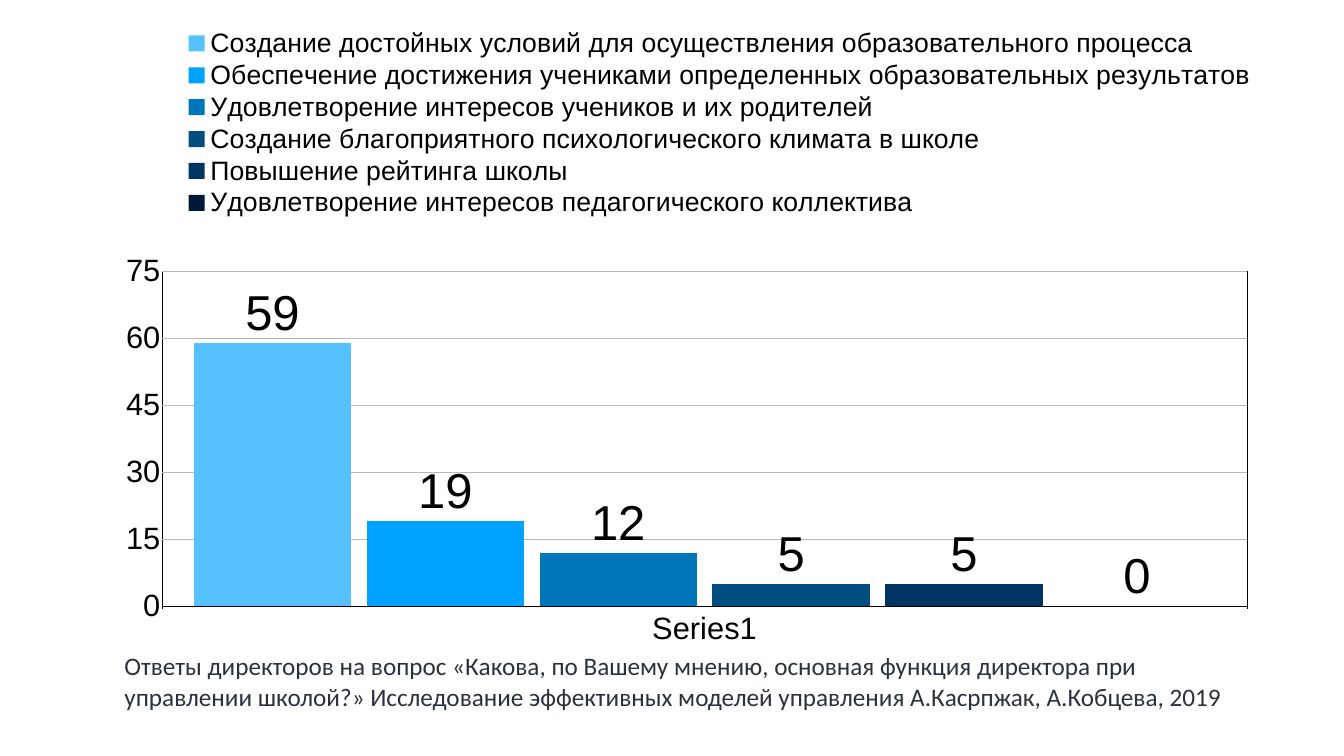
import pptx
import pptx.chart.data
import pptx.dml.color
import pptx.enum.chart
import pptx.enum.text
import pptx.oxml
import pptx.oxml.ns
import pptx.util

RGBColor = pptx.dml.color.RGBColor
Inches, Pt = pptx.util.Inches, pptx.util.Pt
xl = pptx.enum.chart

BLACK = RGBColor(0x00, 0x00, 0x00)
SLATE = RGBColor(0x2C, 0x32, 0x3D)
GRID = RGBColor(0xB8, 0xB8, 0xB8)

CATEGORY = "Series1"
ANSWERS = [
    ("Создание достойных условий для осуществления образовательного процесса", 59, RGBColor(0x56, 0xC1, 0xFF)),
    ("Обеспечение достижения учениками определенных образовательных результатов", 19, RGBColor(0x00, 0xA2, 0xFF)),
    ("Удовлетворение интересов учеников и их родителей", 12, RGBColor(0x00, 0x76, 0xBA)),
    ("Создание благоприятного психологического климата в школе", 5, RGBColor(0x00, 0x4D, 0x80)),
    ("Повышение рейтинга школы", 5, RGBColor(0x00, 0x34, 0x62)),
    ("Удовлетворение интересов педагогического коллектива", 0, RGBColor(0x00, 0x18, 0x37)),
]
CAPTION = (
    "Ответы директоров на вопрос «Какова, по Вашему мнению, основная функция директора "
    "при управлении школой?» Исследование эффективных моделей управления "
    "А.Касрпжак, А.Кобцева, 2019"
)

CHART_BOX = (-1.02, 0.4, 30.31, 12.78)
CAPTION_BOX = (2.47, 12.91, 22.48, 2.04)
PLOT_SHARE = (0.14, 0.39, 0.71, 0.52)
LEGEND_SHARE = (0.15, 0.01, 0.71, 0.3)


def set_font(font, size, name="Arial", color=BLACK):
    for key, value in {"size": Pt(size), "name": name, "bold": False}.items():
        setattr(font, key, value)
    font.color.rgb = color


def set_line(line, color):
    line.color.rgb = color
    line.width = Pt(1)


def make_layout(shares, inner=False):
    target = '<c:layoutTarget val="inner"/>' if inner else ""
    modes = "".join(f'<c:{k}Mode val="edge"/>' for k in "xy")
    sizes = "".join(f'<c:{k} val="{v}"/>' for k, v in zip("xywh", shares))
    return pptx.oxml.parse_xml(
        f'<c:layout {pptx.oxml.ns.nsdecls("c")}><c:manualLayout>'
        f"{target}{modes}{sizes}</c:manualLayout></c:layout>"
    )


def place(element, layout, index):
    for old in element.findall(pptx.oxml.ns.qn("c:layout")):
        element.remove(old)
    element.insert(index, layout)


def add_answers_chart(s):
    data = pptx.chart.data.CategoryChartData(number_format="#,##0")
    data.categories = [CATEGORY]
    for name, value, _ in ANSWERS:
        data.add_series(name, [value])
    chart = s.shapes.add_chart(
        xl.XL_CHART_TYPE.COLUMN_CLUSTERED, *map(Inches, CHART_BOX), data
    ).chart
    set_font(chart.font, 10, "Calibri", SLATE)
    chart.has_title = False

    plot = chart.plots[0]
    for key, value in {"gap_width": 40, "overlap": -10, "vary_by_categories": False}.items():
        setattr(plot, key, value)
    for series, (_, _, color) in zip(plot.series, ANSWERS):
        series.format.fill.solid()
        series.format.fill.fore_color.rgb = color
        labels = series.data_labels
        for key, value in {
            "show_value": True,
            "position": xl.XL_LABEL_POSITION.OUTSIDE_END,
            "number_format": "#,##0",
            "number_format_is_linked": False,
        }.items():
            setattr(labels, key, value)
        set_font(labels.font, 70)

    cat, val = chart.category_axis, chart.value_axis
    for axis, tick, grid in (
        (cat, xl.XL_TICK_MARK.CROSS, BLACK),
        (val, xl.XL_TICK_MARK.NONE, GRID),
    ):
        axis.major_tick_mark = tick
        axis.minor_tick_mark = xl.XL_TICK_MARK.NONE
        axis.has_major_gridlines = True
        set_line(axis.major_gridlines.format.line, grid)
        set_font(axis.tick_labels.font, 44)
    cat.tick_label_position = xl.XL_TICK_LABEL_POSITION.LOW
    set_line(cat.format.line, BLACK)
    val.format.line.fill.background()
    for key, value in {"minimum_scale": 0, "maximum_scale": 75, "major_unit": 15}.items():
        setattr(val, key, value)
    val.tick_labels.number_format = "General"
    val.tick_labels.number_format_is_linked = False

    chart.has_legend = True
    legend = chart.legend
    legend.position = xl.XL_LEGEND_POSITION.TOP
    legend.include_in_layout = True
    set_font(legend.font, 38)
    place(legend._element, make_layout(LEGEND_SHARE), 1)
    place(chart._chartSpace.chart.plotArea, make_layout(PLOT_SHARE, True), 0)


def add_caption(s):
    tf = s.shapes.add_textbox(*map(Inches, CAPTION_BOX)).text_frame
    for key in ("left", "top", "right", "bottom"):
        setattr(tf, f"margin_{key}", 0)
    tf.word_wrap = True
    tf.vertical_anchor = pptx.enum.text.MSO_ANCHOR.TOP
    r = tf.paragraphs[0].add_run()
    r.text = CAPTION
    set_font(r.font, 36, "Calibri", SLATE)


def main():
    prs = pptx.Presentation()
    prs.slide_width, prs.slide_height = Inches(26.67), Inches(15)
    s = prs.slides.add_slide(prs.slide_layouts[6])
    add_answers_chart(s)
    add_caption(s)
    prs.save("out.pptx")


if __name__ == "__main__":
    main()
